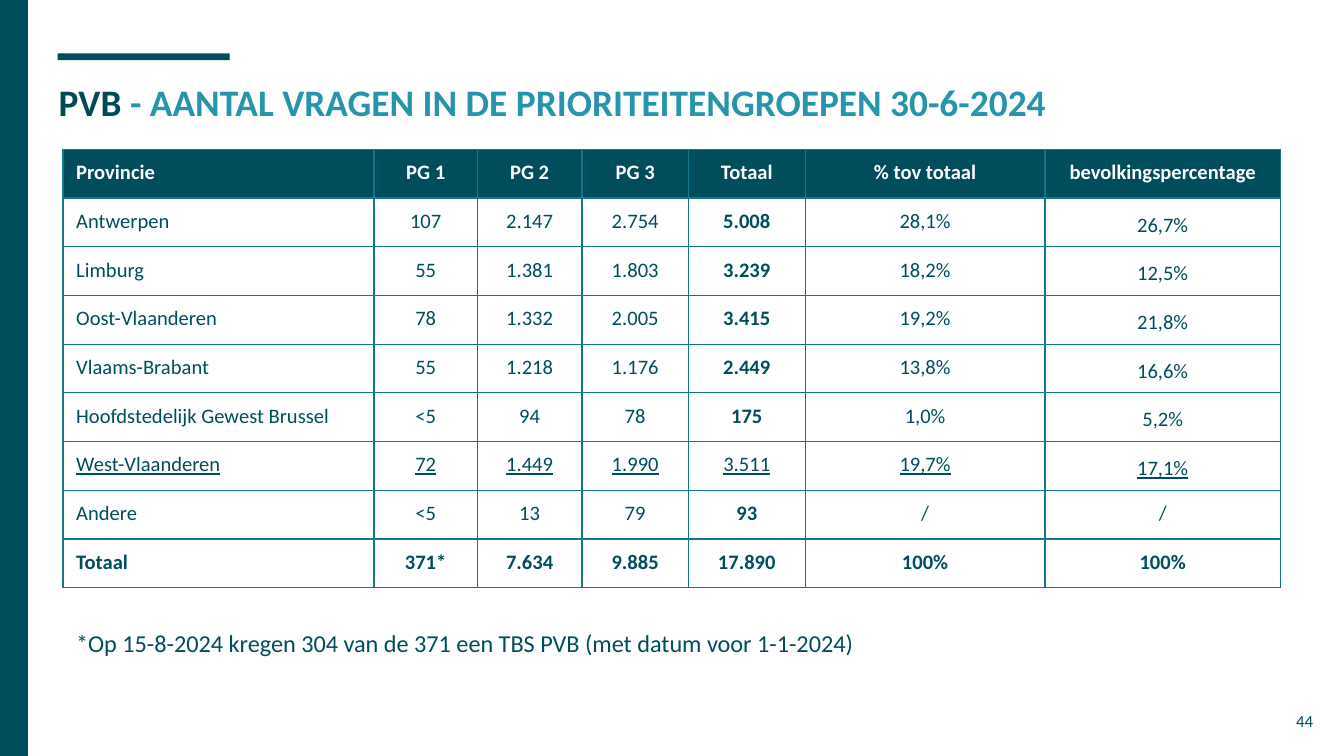
import pptx
import pptx.dml.color
import pptx.enum.shapes
import pptx.enum.text
import pptx.oxml
import pptx.oxml.ns
import pptx.util
from pptx.util import Cm

RGBColor = pptx.dml.color.RGBColor
Align = pptx.enum.text.PP_ALIGN
Anchor = pptx.enum.text.MSO_ANCHOR
AutoSize = pptx.enum.text.MSO_AUTO_SIZE

TEAL = RGBColor(0x00, 0x4D, 0x5C)
DARK_TEAL = RGBColor(0x00, 0x4B, 0x53)
LIGHT_TEAL = RGBColor(0x26, 0x95, 0xAB)
GRID_TEAL = RGBColor(0x11, 0x78, 0x8C)
WHITE = RGBColor(0xFF, 0xFF, 0xFF)

COLUMN_WIDTHS = [5.88, 1.95, 1.98, 2.01, 2.21, 4.53, 4.45]
ROW_HEIGHT = 0.92
UNDERLINED_PROVINCE = "West-Vlaanderen"
ROWS = [
    ["Provincie", "PG 1", "PG 2", "PG 3", "Totaal", "% tov totaal", "bevolkingspercentage"],
    ["Antwerpen", "107", "2.147", "2.754", "5.008", "28,1%", "26,7%"],
    ["Limburg", "55", "1.381", "1.803", "3.239", "18,2%", "12,5%"],
    ["Oost-Vlaanderen", "78", "1.332", "2.005", "3.415", "19,2%", "21,8%"],
    ["Vlaams-Brabant", "55", "1.218", "1.176", "2.449", "13,8%", "16,6%"],
    ["Hoofdstedelijk Gewest Brussel", "<5", "94", "78", "175", "1,0%", "5,2%"],
    ["West-Vlaanderen", "72", "1.449", "1.990", "3.511", "19,7%", "17,1%"],
    ["Andere", "<5", "13", "79", "93", "/", "/"],
    ["Totaal", "371*", "7.634", "9.885", "17.890", "100%", "100%"],
]


class SlideWriter:
    font_name = "Calibri"
    inset = Cm(0.25)

    def __init__(self, slide):
        self.slide = slide

    def style(self, span, size, color, bold=False, underline=False):
        span.font.name = self.font_name
        span.font.size = pptx.util.Pt(size)
        span.font.color.rgb = color
        span.font.bold = bold
        span.font.underline = underline

    def frame(self, box, auto_size=AutoSize.NONE):
        frame = box.text_frame
        frame.word_wrap = True
        frame.auto_size = auto_size
        frame.vertical_anchor = Anchor.TOP
        frame.margin_left = frame.margin_right = self.inset
        frame.margin_top = frame.margin_bottom = self.inset
        return frame

    def bar(self, left, top, width, height):
        bar = self.slide.shapes.add_shape(
            pptx.enum.shapes.MSO_SHAPE.RECTANGLE, Cm(left), Cm(top), Cm(width), Cm(height))
        bar.shadow.inherit = False
        bar.fill.solid()
        bar.fill.fore_color.rgb = TEAL
        bar.line.fill.background()

    def title(self, left, top, width, height, parts):
        title = self.slide.shapes.title
        title.left, title.top, title.width, title.height = map(Cm, (left, top, width, height))
        para = self.frame(title).paragraphs[0]
        para.alignment = Align.LEFT
        for text, color in parts:
            span = para.add_run()
            span.text = text
            self.style(span, 20, color, bold=True)

    def text(self, left, top, width, height, text, size, align=Align.LEFT, auto_size=AutoSize.NONE):
        box = self.slide.shapes.add_textbox(Cm(left), Cm(top), Cm(width), Cm(height))
        para = self.frame(box, auto_size).paragraphs[0]
        para.text = text
        para.alignment = align
        self.style(para.runs[0], size, TEAL)

    def borders(self, cell):
        properties = cell._tc.get_or_add_tcPr()
        for index, side in enumerate(("lnL", "lnR", "lnT", "lnB")):
            properties.insert(index, pptx.oxml.parse_xml(
                f'<a:{side} {pptx.oxml.ns.nsdecls("a")} w="9525"><a:solidFill>'
                f'<a:srgbClr val="{GRID_TEAL}"/></a:solidFill></a:{side}>'))

    def cell(self, cell, text, align, color, bold, underline):
        cell.margin_left = cell.margin_right = self.inset
        cell.margin_top, cell.margin_bottom = Cm(0.2), 0
        cell.vertical_anchor = Anchor.TOP
        para = cell.text_frame.paragraphs[0]
        para.text = text
        para.alignment = align
        self.style(para.runs[0], 11, color, bold, underline)

    def table(self, left, top, widths, row_height, rows):
        table = self.slide.shapes.add_table(
            len(rows), len(widths), Cm(left), Cm(top),
            Cm(sum(widths)), Cm(row_height * len(rows))).table
        table.first_row = table.horz_banding = False
        for column, width in zip(table.columns, widths):
            column.width = Cm(width)
        last_row, last_column = len(rows) - 1, len(widths) - 1
        for row_index, values in enumerate(rows):
            table.rows[row_index].height = Cm(row_height)
            header = row_index == 0
            underline = values[0] == UNDERLINED_PROVINCE
            for column_index, value in enumerate(values):
                cell = table.cell(row_index, column_index)
                total = row_index == last_row or column_index == 4
                self.cell(cell, value, Align.CENTER if column_index else Align.LEFT,
                          WHITE if header else TEAL, header or total and not underline, underline)
                if header:
                    cell.fill.solid()
                    cell.fill.fore_color.rgb = TEAL
                else:
                    cell.fill.background()
                    if column_index == last_column and value.endswith("%") and row_index < last_row:
                        cell.text_frame.paragraphs[0].line_spacing = 1.15
                self.borders(cell)


def main():
    deck = pptx.Presentation()
    deck.slide_width, deck.slide_height = Cm(25.4), Cm(14.28)
    page = SlideWriter(deck.slides.add_slide(deck.slide_layouts[5]))
    page.bar(1.09, 1.01, 3.25, 0.13)
    page.bar(0, 0, 0.53, 14.28)
    page.title(0.86, 1.24, 23.67, 1.6, [
        ("PVB ", DARK_TEAL),
        ("- AANTAL VRAGEN IN DE PRIORITEITENGROEPEN 30-6-2024", LIGHT_TEAL),
    ])
    page.text(23.55, 13.18, 1.52, 1.09, "44", 9, align=Align.RIGHT)
    page.table(1.19, 2.82, COLUMN_WIDTHS, ROW_HEIGHT, ROWS)
    page.text(1.19, 11.61, 20.12, 1.07,
              "*Op 15-8-2024 kregen 304 van de 371 een TBS PVB (met datum voor 1-1-2024)",
              13, auto_size=AutoSize.SHAPE_TO_FIT_TEXT)
    deck.save("out.pptx")


if __name__ == "__main__":
    main()
